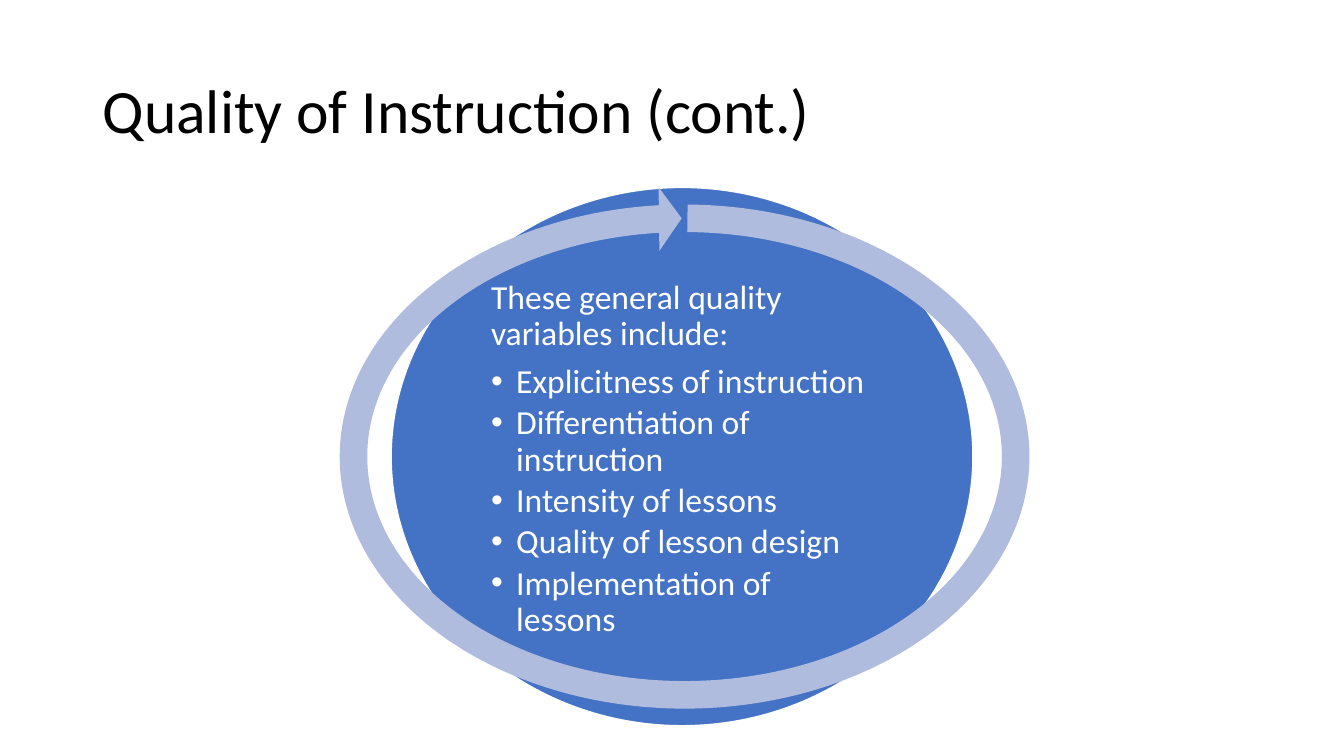
import pptx
import pptx.dml.color
import pptx.enum.shapes
import pptx.enum.text
import pptx.oxml.ns
import pptx.util
from lxml import etree

Inches = pptx.util.Inches
Pt = pptx.util.Pt
SHAPE = pptx.enum.shapes.MSO_SHAPE
ANCHOR = pptx.enum.text.MSO_ANCHOR
COLORS = {"title": "000000", "disc": "4472C4", "ring": "B0BCDE", "light": "FFFFFF"}
VARIABLES = [
    "Explicitness of instruction",
    "Differentiation of instruction",
    "Intensity of lessons",
    "Quality of lesson design",
    "Implementation of lessons",
]


def set_all(target, values):
    for name, value in values.items():
        setattr(target, name, value)


def add_bullet(para, indent):
    """Give the paragraph a round bullet with a hanging indent."""
    properties = para._p.get_or_add_pPr()
    properties.set("marL", str(indent))
    properties.set("indent", str(-indent))
    for tag, key, value in (("a:buFont", "typeface", "Arial"), ("a:buChar", "char", "•")):
        etree.SubElement(properties, pptx.oxml.ns.qn(tag)).set(key, value)


class Painter:
    """Holds the text style and the slide being drawn."""

    font = "Calibri"
    line_spacing = 0.9

    def __init__(self, page):
        self.page = page

    def color(self, name):
        return pptx.dml.color.RGBColor.from_string(COLORS[name])

    def shape(self, kind, place, fill, line=None, adjustments=()):
        shape = self.page.shapes.add_shape(kind, *map(Inches, place))
        shape.shadow.inherit = False
        shape.fill.solid()
        shape.fill.fore_color.rgb = self.color(fill)
        if line:
            shape.line.color.rgb = self.color(line)
            shape.line.width = Pt(1)
        else:
            shape.line.fill.background()
        for index, value in enumerate(adjustments):
            shape.adjustments[index] = value

    def text_box(self, place, **frame_format):
        frame = self.page.shapes.add_textbox(*map(Inches, place)).text_frame
        set_all(frame, {"word_wrap": True, **frame_format})
        return frame

    def add_text(self, para, text, size, color, space_after=0):
        set_all(para, {"line_spacing": self.line_spacing, "space_after": Pt(space_after)})
        span = para.add_run()
        span.text = text
        set_all(span.font, {"name": self.font, "size": Pt(size)})
        span.font.color.rgb = self.color(color)


def main():
    deck = pptx.Presentation()
    set_all(deck, {"slide_width": Inches(13.33), "slide_height": Inches(7.5)})
    painter = Painter(deck.slides.add_slide(deck.slide_layouts[6]))

    title = painter.text_box((0.92, 0.4, 11.5, 1.45), vertical_anchor=ANCHOR.MIDDLE)
    painter.add_text(title.paragraphs[0], "Quality of Instruction (cont.)", 44, "title")

    painter.shape(SHAPE.OVAL, (3.88, 1.86, 5.77, 5.34), "disc", line="light")

    sides = ("left", "top", "right", "bottom")
    margins = {f"margin_{side}": Inches(0.03) for side in sides}
    body = painter.text_box((4.84, 2.75, 3.85, 3.56), **margins)
    painter.add_text(body.paragraphs[0], "These general quality variables include:",
                     24, "light", space_after=8.4)
    for variable in VARIABLES:
        para = body.add_paragraph()
        para.level = 1
        painter.add_text(para, variable, 24, "light", space_after=3.6)
        add_bullet(para, Inches(0.25))

    painter.shape(SHAPE.CIRCULAR_ARROW, (3.19, 1.85, 7.2, 5.36), "ring",
                  adjustments=(0.051, 3.275, 158.312, 162.413, 0.059))

    deck.save("out.pptx")


if __name__ == "__main__":
    main()
